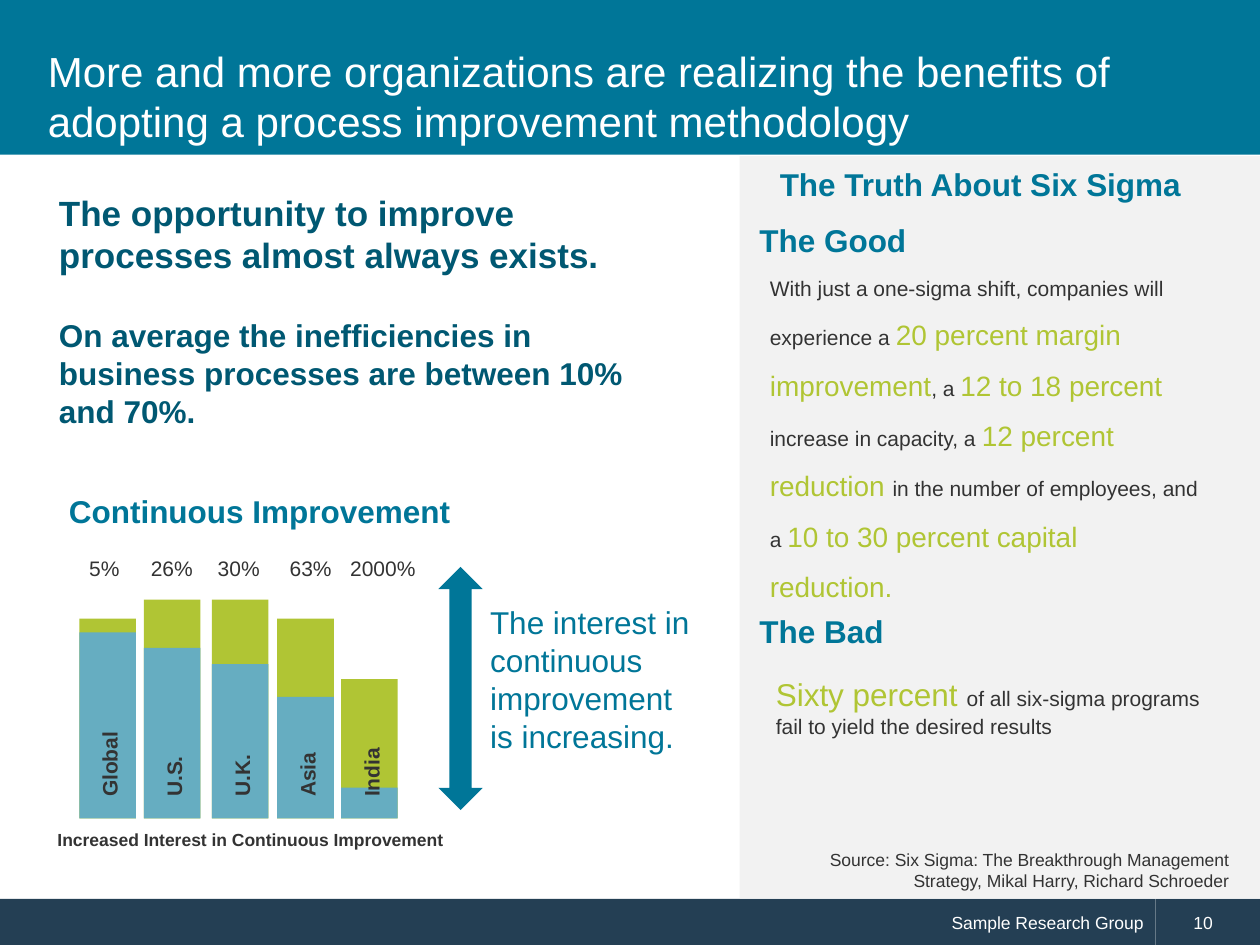
"""Build a slide on the benefits of process improvement methodologies."""
from pptx import Presentation
from pptx.dml.color import RGBColor
from pptx.enum import shapes, text
from pptx.util import Cm, Pt

FONT = "Arial"
COLORS = {
    "teal": "007698",
    "deep": "005872",
    "navy": "243F54",
    "green": "B0C534",
    "blue": "66ADC1",
    "panel": "F2F2F2",
    "ink": "333333",
    "white": "FFFFFF",
}
BAR_WIDTH = 1.14
BAR_BASE = 16.5
BARS = [
    ("Global", "5%", 1.6, 12.47, 12.75, 1.55),
    ("U.S.", "26%", 2.9, 12.09, 13.06, 2.79),
    ("U.K.", "30%", 4.27, 12.09, 13.39, 4.14),
    ("Asia", "63%", 5.59, 12.47, 14.05, 5.59),
    ("India", "2000%", 6.88, 13.69, 15.88, 6.81),
]
GOOD_NEWS = [
    ("With just a one-sigma shift, companies will experience a ", 12, "ink"),
    ("20 percent margin improvement", 16, "green"),
    (", a ", 12, "ink"),
    ("12 to 18 percent ", 16, "green"),
    ("increase in capacity, a ", 12, "ink"),
    ("12 percent reduction ", 16, "green"),
    ("in the number of employees, and a ", 12, "ink"),
    ("10 to 30 percent capital reduction.", 16, "green"),
]
BAD_NEWS = [
    ("Sixty percent ", 18, "green"),
    ("of all six-sigma programs fail to yield the desired results", 12, "ink"),
]
STATEMENTS = [
    ("The opportunity to improve processes almost always exists.",
     (0.94, 3.73, 12.7, 1.96), 20, "deep", True),
    ("On average the inefficiencies in business processes are between 10% and 70%.",
     (0.94, 6.25, 12.7, 2.57), 18, "deep", True),
    ("Continuous Improvement", (1.14, 9.8, 8.56, 1.02), 18, "teal", True),
    ("Increased Interest in Continuous Improvement",
     (0.91, 16.59, 8.64, 0.69), 10, "ink", True),
    ("The interest in continuous improvement is increasing.",
     (9.63, 12.04, 4.78, 3.33), 18, "teal", False),
    ("The Truth About Six Sigma", (15.47, 3.2, 9.35, 1.02), 18, "teal", True),
    ("The Good", (15.06, 4.34, 3.51, 1.02), 18, "teal", True),
    ("The Bad", (15.06, 12.22, 3.05, 1.02), 18, "teal", True),
]


def color(name):
    return RGBColor.from_string(COLORS[name])


def style(font, size, ink, bold=False):
    font.name, font.size, font.bold = FONT, Pt(size), bold
    font.color.rgb = color(ink)


def write(frame, words, size, ink, bold=False, align=text.PP_ALIGN.LEFT):
    frame.word_wrap = True
    frame.auto_size = text.MSO_AUTO_SIZE.NONE
    line = frame.paragraphs[0]
    line.text, line.alignment = words, align
    style(line.font, size, ink, bold)


def add_block(slide, box, fill, preset=shapes.MSO_SHAPE.RECTANGLE):
    block = slide.shapes.add_shape(preset, *map(Cm, box))
    block.shadow.inherit = False
    block.fill.solid()
    block.fill.fore_color.rgb = color(fill)
    block.line.fill.background()
    return block


def add_label(slide, words, box, size, ink, bold=False, align=text.PP_ALIGN.LEFT):
    label = slide.shapes.add_textbox(*map(Cm, box))
    write(label.text_frame, words, size, ink, bold, align)
    return label


def add_mixed_text(slide, parts, box, spacing=1.0):
    frame = slide.shapes.add_textbox(*map(Cm, box)).text_frame
    frame.word_wrap = True
    line = frame.paragraphs[0]
    line.line_spacing = spacing
    for words, size, ink in parts:
        run = line.add_run()
        run.text = words
        style(run.font, size, ink)


def add_bar(slide, region, growth, left, top, split, growth_left):
    for start, fill in ((top, "green"), (split, "blue")):
        add_block(slide, (left, start, BAR_WIDTH, BAR_BASE - start), fill)
    name = add_label(slide, region, (left - 0.45, 14.88, 2.11, 0.76), 12, "ink", True)
    name.rotation = 270
    growth_width = 2.08 if len(growth) > 3 else 1.52
    add_label(slide, growth, (growth_left, 11.07, growth_width, 0.76), 12, "ink")


def add_footer(slide):
    publisher = add_block(slide, (0, 18.12, 23.3, 0.94), "navy")
    write(publisher.text_frame, "Sample Research Group", 10, "white",
          align=text.PP_ALIGN.RIGHT)
    page = add_block(slide, (23.3, 18.12, 2.1, 0.94), "navy")
    page.text_frame.margin_left = Cm(0.76)
    write(page.text_frame, "10", 10, "white")


def add_title(slide, words):
    add_block(slide, (0, 0, 25.4, 3.12), "teal")
    title = slide.shapes.title
    title.left, title.top, title.width, title.height = map(Cm, (0.71, 0.71, 23.95, 2.44))
    title.text_frame.vertical_anchor = text.MSO_ANCHOR.MIDDLE
    write(title.text_frame, words, 24, "white")
    slide.shapes._spTree.append(title._element)


def main():
    deck = Presentation()
    deck.slide_width, deck.slide_height = Cm(25.4), Cm(19.05)
    slide = deck.slides.add_slide(deck.slide_layouts[5])
    add_footer(slide)
    add_title(slide, "More and more organizations are realizing the benefits of "
                     "adopting a process improvement methodology")
    add_block(slide, (14.91, 3.15, 10.49, 14.96), "panel")
    for bar in BARS:
        add_bar(slide, *bar)
    add_block(slide, (8.84, 11.43, 0.89, 4.9), "teal", shapes.MSO_SHAPE.UP_DOWN_ARROW)
    for statement in STATEMENTS:
        add_label(slide, *statement)
    add_mixed_text(slide, GOOD_NEWS, (15.27, 5.18, 9.19, 7.19), 1.5)
    add_mixed_text(slide, BAD_NEWS, (15.39, 13.49, 9.42, 1.55))
    add_label(slide, "Source: Six Sigma: The Breakthrough Management Strategy, "
                     "Mikal Harry, Richard Schroeder",
              (15.88, 16.99, 9.14, 1.12), 10, "ink", align=text.PP_ALIGN.RIGHT)
    deck.save("out.pptx")


if __name__ == "__main__":
    main()
